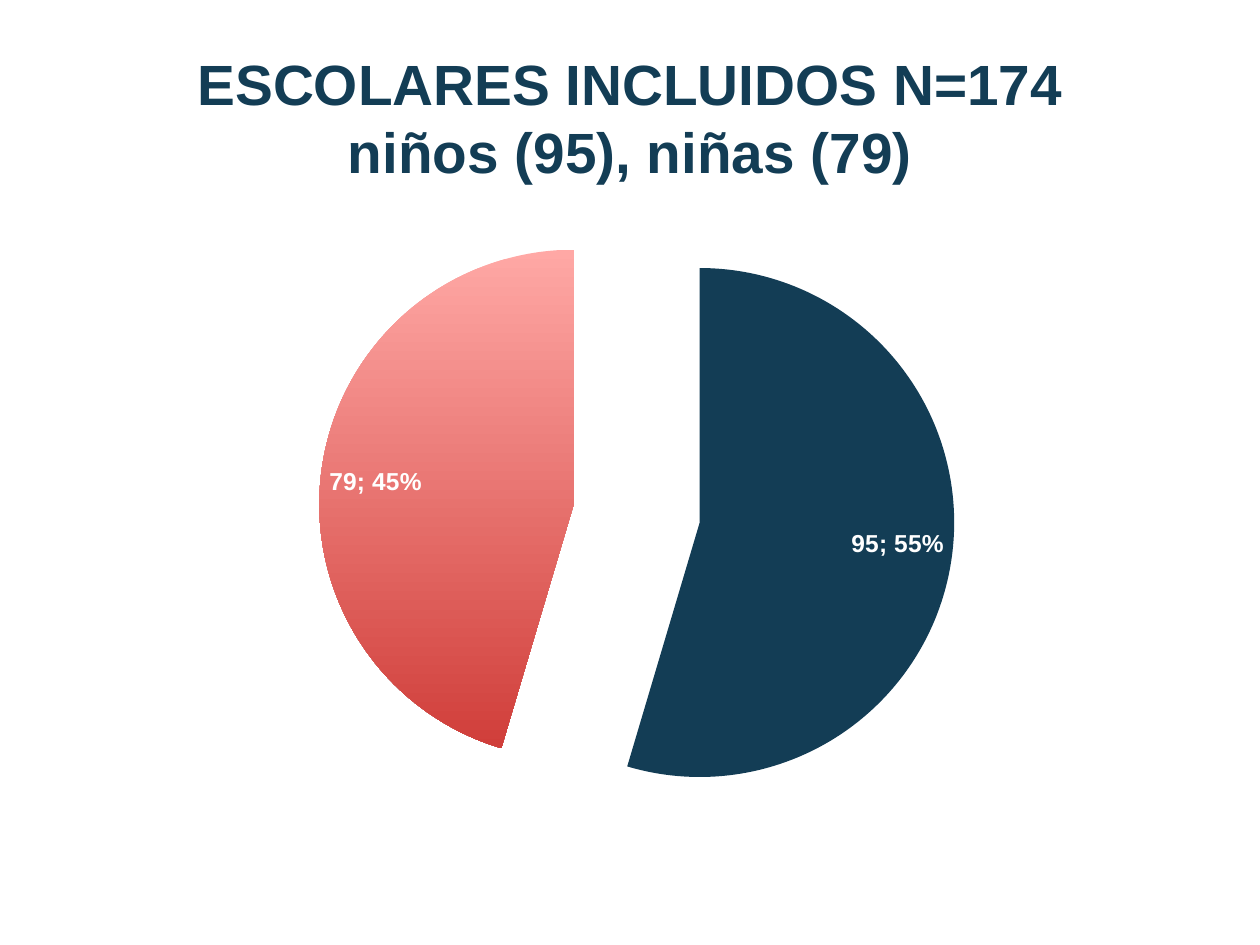
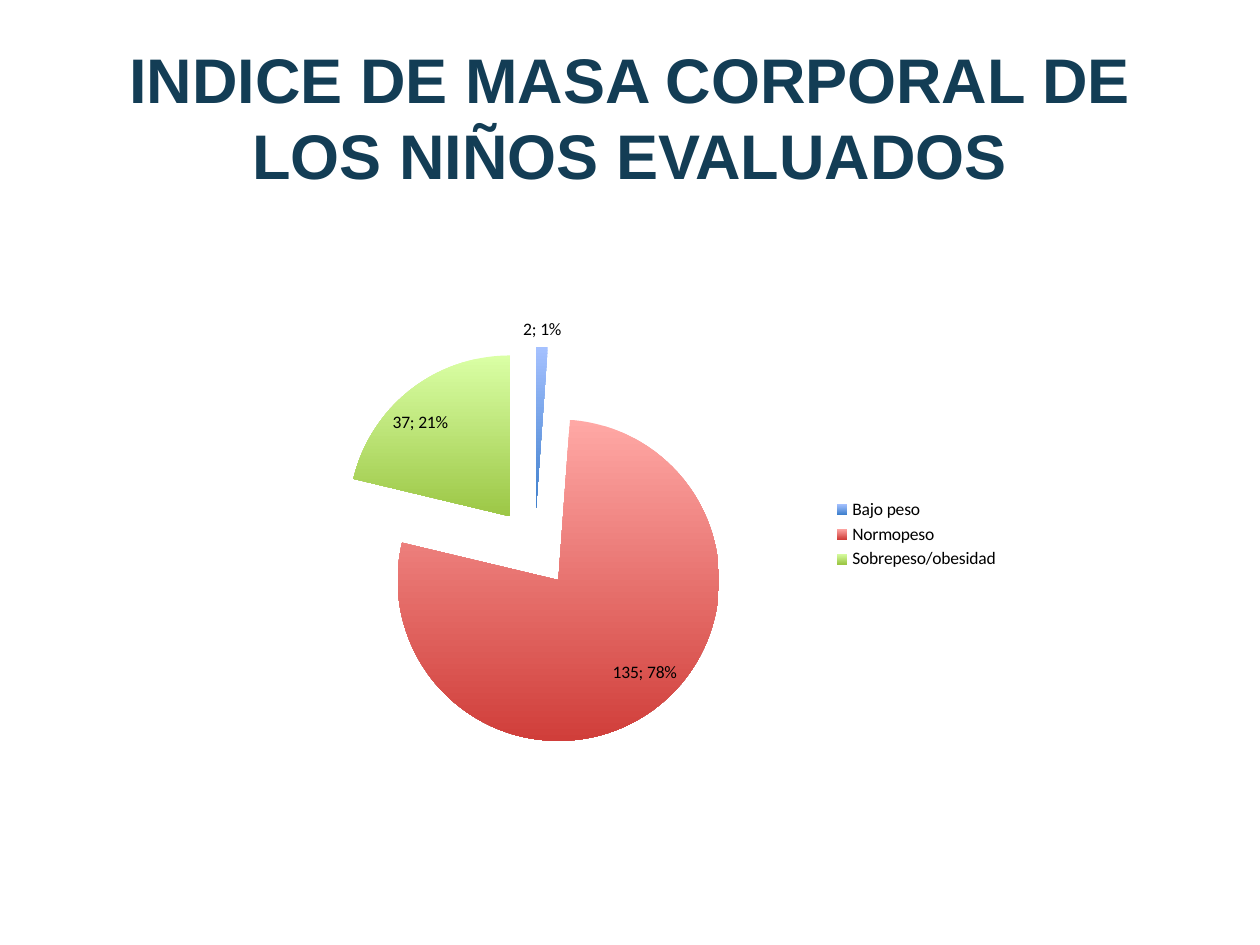
from lxml import etree
from pptx import Presentation
from pptx.chart.data import CategoryChartData
from pptx.dml.color import RGBColor
from pptx.enum.chart import XL_CHART_TYPE, XL_LABEL_POSITION as LabelPosition, XL_LEGEND_POSITION
from pptx.enum.text import MSO_ANCHOR, PP_ALIGN
from pptx.oxml import parse_xml
from pptx.oxml.ns import nsdecls, qn
from pptx.util import Inches, Pt

NAVY = RGBColor(0x13, 0x3D, 0x55)
BLACK = RGBColor(0, 0, 0)
WHITE = RGBColor(0xFF, 0xFF, 0xFF)
# Gradients run from the top colour to the bottom colour
BLUE = RGBColor(0xA5, 0xC1, 0xFF), RGBColor(0x3F, 0x80, 0xCD)
RED = RGBColor(0xFF, 0xA8, 0xA5), RGBColor(0xD0, 0x3E, 0x3A)
GREEN = RGBColor(0xDA, 0xFF, 0xA5), RGBColor(0x9C, 0xC7, 0x46)

# Content
SLIDES = [
    {
        "title": "ESCOLARES INCLUIDOS N=174\vniños (95), niñas (79)",
        "title_size": 32.4,
        "area": (1.67, 1.55, 7.05, 5.05),
        "slices": [("1", 95, NAVY), ("2", 79, RED)],
        "label_font": ("Arial", 14, True, WHITE),
        "label_position": LabelPosition.INSIDE_END,
        "plot": {"x": 0.1, "y": 0, "w": 0.76, "h": 1},
        "legend": False,
    },
    {
        "title": "INDICE DE MASA CORPORAL DE LOS NIÑOS EVALUADOS",
        "title_size": 36,
        "area": (1.89, 2.4, 6.14, 3.68),
        "slices": [("Bajo peso", 2, BLUE), ("Normopeso", 135, RED),
                   ("Sobrepeso/obesidad", 37, GREEN)],
        "label_font": ("Calibri", 10, False, BLACK),
        "label_position": LabelPosition.BEST_FIT,
        "plot": None,
        "legend": True,
    },
]
TITLE_AREA = (0.5, 0.3, 9, 1.25)
EXPLOSION = 25


def set_font(font, name, size, bold, color):
    font.name, font.size, font.bold = name, Pt(size), bold
    font.color.rgb = color


def add_title(slide, text, size):
    frame = slide.shapes.add_textbox(*map(Inches, TITLE_AREA)).text_frame
    frame.word_wrap = True
    frame.vertical_anchor = MSO_ANCHOR.MIDDLE
    paragraph = frame.paragraphs[0]
    paragraph.text = text
    paragraph.alignment = PP_ALIGN.CENTER
    set_font(paragraph.font, "Arial", size, True, NAVY)


def fill_slice(fill, color):
    if isinstance(color, RGBColor):
        fill.solid()
        fill.fore_color.rgb = color
        return
    fill.gradient()
    fill.gradient_angle = 270
    for stop, stop_color in zip(fill.gradient_stops, color):
        stop.color.rgb = stop_color


def place_plot(chart, plot):
    """Fix the inner plot area, in shares of the chart."""
    sizes = "".join(f'<c:{key} val="{value}"/>' for key, value in plot.items())
    layout = parse_xml(
        f'<c:layout {nsdecls("c")}><c:manualLayout><c:layoutTarget val="inner"/>'
        f'<c:xMode val="edge"/><c:yMode val="edge"/>{sizes}</c:manualLayout></c:layout>')
    plot_area = chart.element.find(".//" + qn("c:plotArea"))
    for old_layout in plot_area.findall(qn("c:layout")):
        plot_area.remove(old_layout)
    plot_area.insert(0, layout)


def add_pie(slide, content):
    names, values, colors = zip(*content["slices"])
    data = CategoryChartData()
    data.categories = names
    data.add_series("Series 1", values)
    chart = slide.shapes.add_chart(
        XL_CHART_TYPE.PIE, *map(Inches, content["area"]), data).chart
    set_font(chart.font, "Calibri", 10, False, BLACK)
    chart.has_title = False
    chart.has_legend = content["legend"]
    if chart.has_legend:
        chart.legend.position = XL_LEGEND_POSITION.RIGHT
        chart.legend.include_in_layout = False
    if content["plot"]:
        place_plot(chart, content["plot"])

    # Slices, pulled apart
    pie = chart.plots[0]
    pie.vary_by_categories = True
    series = pie.series[0]
    for index, color in enumerate(colors):
        point_format = series.points[index].format
        fill_slice(point_format.fill, color)
        point_format.line.fill.background()
    explosion = etree.Element(qn("c:explosion"), val=str(EXPLOSION))
    series._element.find(qn("c:dPt")).addprevious(explosion)

    # Labels: value and share
    labels = series.data_labels
    labels.show_value = labels.show_percentage = True
    labels.position = content["label_position"]
    set_font(labels.font, *content["label_font"])
    separator = etree.Element(qn("c:separator"))
    separator.text = "; "
    flags = [child for child in labels._element
             if child.tag in (qn("c:showPercent"), qn("c:showBubbleSize"))]
    flags[-1].addnext(separator)


def main():
    presentation = Presentation()
    presentation.slide_width, presentation.slide_height = Inches(10), Inches(7.5)
    for content in SLIDES:
        slide = presentation.slides.add_slide(presentation.slide_layouts[6])
        add_title(slide, content["title"], content["title_size"])
        add_pie(slide, content)
    presentation.save("out.pptx")


if __name__ == "__main__":
    main()
